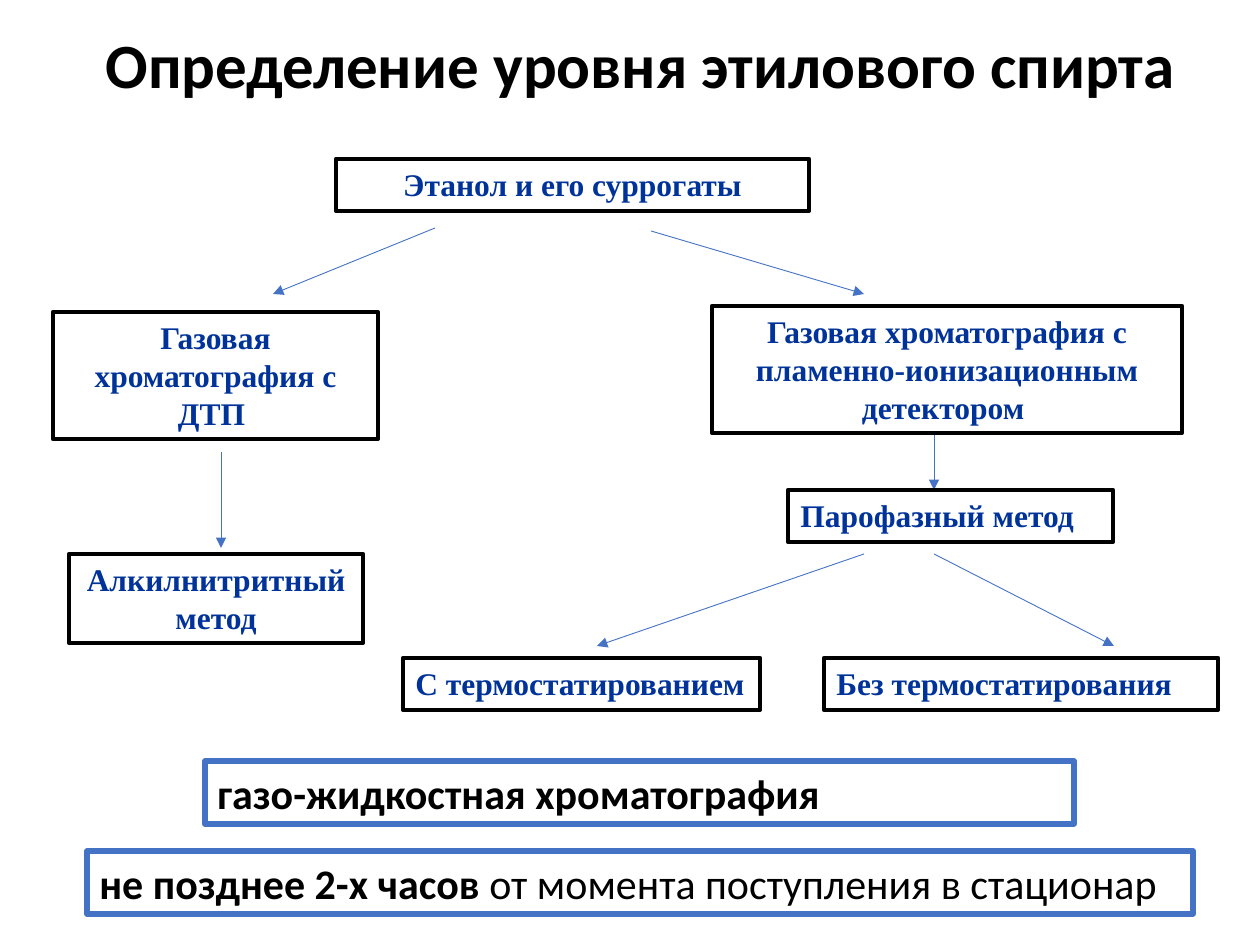
from dataclasses import dataclass

from lxml.etree import SubElement
from pptx import Presentation
from pptx.dml.color import RGBColor
from pptx.enum.shapes import MSO_CONNECTOR, MSO_SHAPE
from pptx.enum.text import MSO_ANCHOR, MSO_AUTO_SIZE, PP_ALIGN
from pptx.oxml.ns import qn
from pptx.util import Emu, Pt

EMU_PER_PX = 914400 / 126


def px(n):
    return Emu(round(n * EMU_PER_PX))


@dataclass(frozen=True)
class Theme:
    black: RGBColor = RGBColor(0x00, 0x00, 0x00)
    white: RGBColor = RGBColor(0xFF, 0xFF, 0xFF)
    navy: RGBColor = RGBColor(0x00, 0x33, 0x99)
    blue: RGBColor = RGBColor(0x44, 0x72, 0xC4)
    sans: str = "Calibri"
    serif: str = "Times New Roman"
    title_size: int = 36
    node_size: int = 18
    note_size: int = 24


class SlideBuilder:
    def __init__(self, slide, theme):
        self.s = slide
        self.theme = theme

    def style_font(self, font, name, size, color, bold=True):
        font.name, font.size, font.bold = name, Pt(size), bold
        font.color.rgb = color

    def title(self, text, x, y, w, h):
        t, sp = self.theme, self.s.shapes.title
        sp.left, sp.top, sp.width, sp.height = map(px, (x, y, w, h))
        tf = sp.text_frame
        tf.text = text
        tf.auto_size = MSO_AUTO_SIZE.NONE
        tf.vertical_anchor = MSO_ANCHOR.MIDDLE
        p = tf.paragraphs[0]
        p.alignment, p.line_spacing = PP_ALIGN.CENTER, 0.9
        self.style_font(p.font, t.sans, t.title_size, t.black)

    def box(self, x, y, w, h, line_color, line_width, align):
        """Add a white framed rectangle and return its paragraph."""
        sp = self.s.shapes.add_shape(MSO_SHAPE.RECTANGLE, *map(px, (x, y, w, h)))
        sp.shadow.inherit = False
        sp.fill.solid()
        sp.fill.fore_color.rgb = self.theme.white
        sp.line.color.rgb = line_color
        sp.line.width = Pt(line_width)
        tf = sp.text_frame
        tf.word_wrap = True
        tf.auto_size = MSO_AUTO_SIZE.SHAPE_TO_FIT_TEXT
        tf.vertical_anchor = MSO_ANCHOR.TOP
        p = tf.paragraphs[0]
        p.alignment = align
        return p

    def node(self, text, x, y, w, h, align=PP_ALIGN.CENTER):
        t = self.theme
        p = self.box(x, y, w, h, t.black, 2.5, align)
        p.text = text
        self.style_font(p.font, t.serif, t.node_size, t.navy)

    def note(self, runs, x, y, w, h):
        t = self.theme
        p = self.box(x, y, w, h, t.blue, 3, PP_ALIGN.LEFT)
        for text, bold in runs:
            r = p.add_run()
            r.text = text
            self.style_font(r.font, t.sans, t.note_size, t.black, bold)

    def arrow(self, x1, y1, x2, y2):
        c = self.s.shapes.add_connector(MSO_CONNECTOR.STRAIGHT, *map(px, (x1, y1, x2, y2)))
        c.line.color.rgb = self.theme.blue
        c.line.width = Pt(0.5)
        SubElement(c.line._get_or_add_ln(), qn("a:tailEnd"), type="triangle")
        SubElement(c._element.spPr, qn("a:effectLst"))


def main():
    prs = Presentation()
    prs.slide_width, prs.slide_height = px(1260), px(945)
    title_only = prs.slide_layouts[5]
    b = SlideBuilder(prs.slides.add_slide(title_only), Theme())

    b.title("Определение уровня этилового спирта", 21, 42, 1239, 53)

    # Arrows between the levels
    for ends in [
        (435, 228, 273, 294),
        (651, 231, 864, 294),
        (221, 452, 221, 548),
        (934, 396, 934, 490),
        (864, 554, 597, 646),
        (934, 554, 1114, 646),
    ]:
        b.arrow(*ends)

    # Root and detector types
    b.node("Этанол и его суррогаты", 336, 159, 473, 52)
    b.node("Газовая хроматография с ДТП ", 53, 312, 325, 127)
    b.node("Газовая хроматография с пламенно-ионизационным детектором ", 712, 306, 470, 127)

    # Methods
    b.node("Алкилнитритный метод", 69, 554, 294, 89)
    b.node("Парофазный метод", 788, 490, 325, 52, PP_ALIGN.LEFT)
    b.node("С термостатированием", 403, 658, 357, 52, PP_ALIGN.LEFT)
    b.node("Без термостатирования", 824, 658, 394, 52, PP_ALIGN.LEFT)

    # Notes under the diagram
    b.note([("газо-жидкостная хроматография", True)], 205, 761, 869, 63)
    b.note([("не позднее 2-х часов", True),
            (" от момента поступления в стационар", False)], 87, 851, 1106, 63)

    prs.save("out.pptx")


if __name__ == "__main__":
    main()
